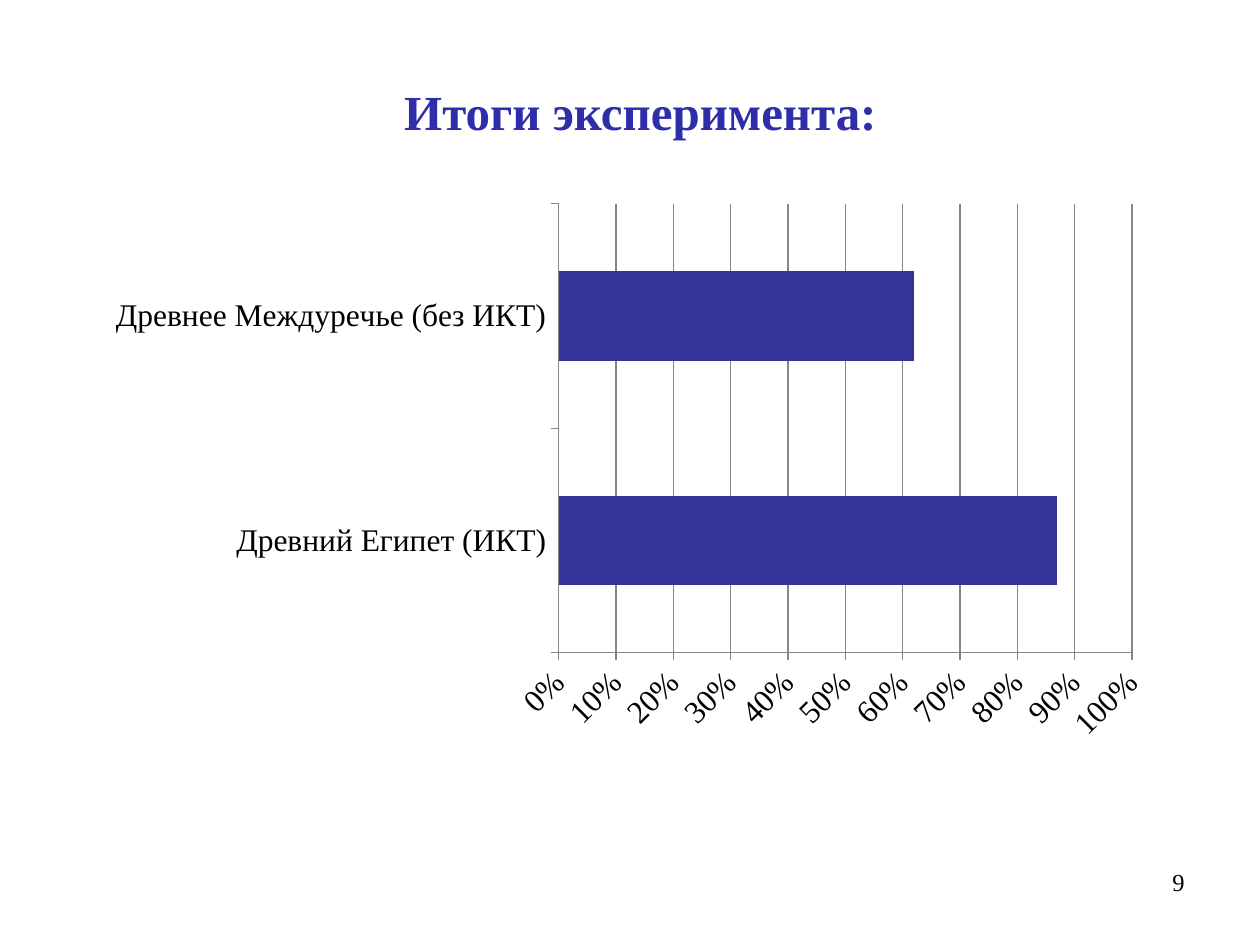
from pptx import Presentation
from pptx.chart.data import CategoryChartData
from pptx.dml.color import RGBColor
from pptx.enum.chart import XL_CHART_TYPE as ChartType, XL_TICK_MARK as TickMark
from pptx.enum.text import PP_ALIGN as Align
from pptx.util import Pt

FONT = "Times New Roman"
BLACK = RGBColor(0x00, 0x00, 0x00)
TITLE_BLUE = RGBColor(0x2E, 0x2E, 0xAA)
BAR_BLUE = RGBColor(0x33, 0x33, 0x99)
AXIS_GRAY = RGBColor(0x86, 0x86, 0x86)

RESULTS = {"Древний Египет (ИКТ)": 0.87, "Древнее Междуречье (без ИКТ)": 0.62}


def set_font(font, size, color, bold=False):
    font.name, font.size, font.bold = FONT, Pt(size), bold
    font.color.rgb = color


def add_text(page, area, text, align, size, color, bold=False):
    box = page.shapes.add_textbox(*map(Pt, area))
    box.text_frame.word_wrap = True
    para = box.text_frame.paragraphs[0]
    para.text = text
    para.alignment = align
    set_font(para.font, size, color, bold)


def style_line(line):
    line.color.rgb = AXIS_GRAY
    line.width = Pt(0.75)


def add_results_chart(page, area):
    data = CategoryChartData(number_format="0%")
    data.categories = list(RESULTS)
    data.add_series("Результат", list(RESULTS.values()))
    frame = page.shapes.add_chart(ChartType.BAR_CLUSTERED, *map(Pt, area), data)
    chart = frame.chart
    chart.has_legend = False
    chart.has_title = False
    set_font(chart.font, 18, BLACK)

    # Bars
    plot = chart.plots[0]
    plot.gap_width = 150
    plot.vary_by_categories = False
    fill = plot.series[0].format.fill
    fill.solid()
    fill.fore_color.rgb = BAR_BLUE

    # Axes and gridlines
    for axis in (chart.category_axis, chart.value_axis):
        axis.major_tick_mark = TickMark.OUTSIDE
        axis.minor_tick_mark = TickMark.NONE
        style_line(axis.format.line)
        set_font(axis.tick_labels.font, 18, BLACK)
    scale = chart.value_axis
    scale.minimum_scale, scale.maximum_scale, scale.major_unit = 0, 1, 0.1
    scale.has_major_gridlines = True
    style_line(scale.major_gridlines.format.line)
    scale.tick_labels.number_format = "0%"
    scale.tick_labels.number_format_is_linked = False


def main():
    deck = Presentation()
    deck.slide_width, deck.slide_height = Pt(720), Pt(540)
    page = deck.slides.add_slide(deck.slide_layouts[6])

    # Title
    add_text(page, (88, 43, 644 - 88 + 88 - 88, 41), "Итоги эксперимента:",
             Align.CENTER, 28, TITLE_BLUE, bold=True)
    # Experiment results
    add_results_chart(page, (54, 110, 612, 320))
    # Page number
    add_text(page, (516, 492, 168, 37), "9", Align.RIGHT, 14, BLACK)

    deck.save("out.pptx")


if __name__ == "__main__":
    main()
